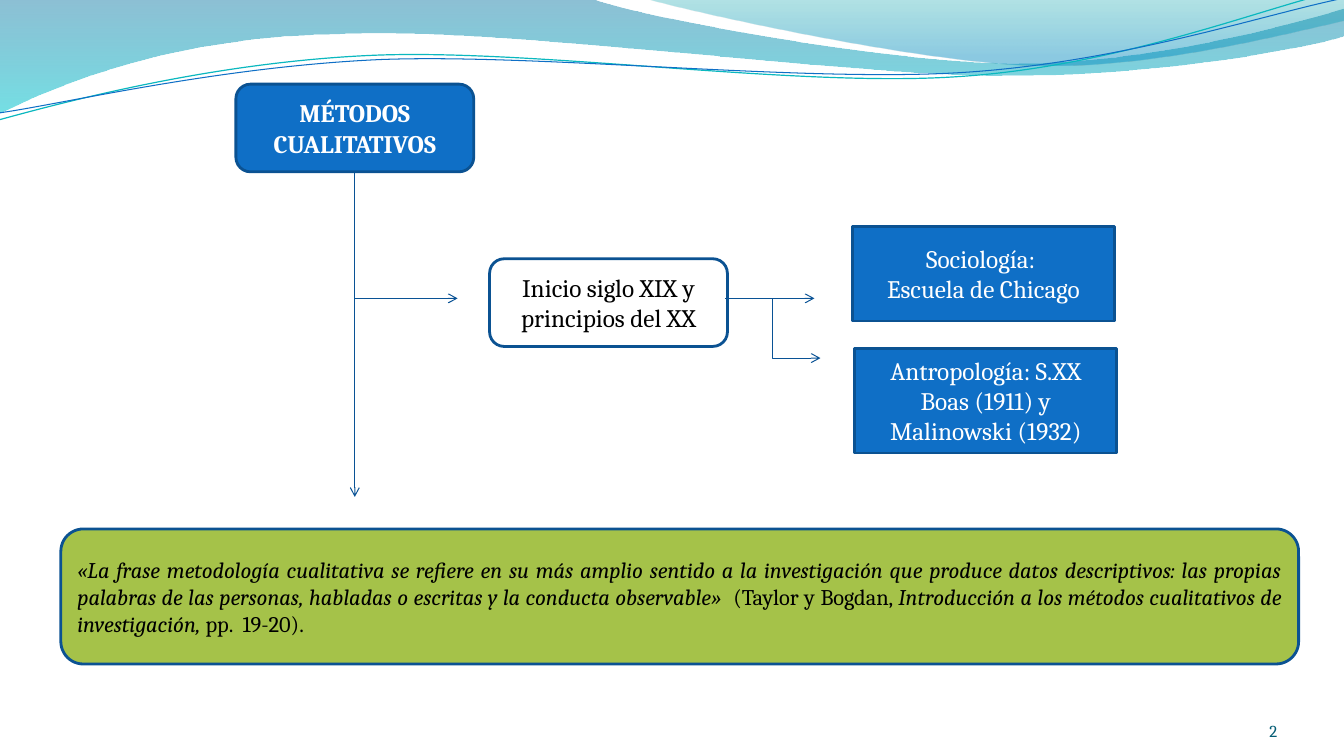
"""Build the slide on qualitative methods on a grid of 40 columns by 30 rows."""
import lxml.etree
import pptx
import pptx.dml.color
import pptx.enum.shapes
import pptx.enum.text
import pptx.oxml
import pptx.oxml.ns
import pptx.util

RGB = pptx.dml.color.RGBColor
KIND = pptx.enum.shapes.MSO_SHAPE
LINK = pptx.enum.shapes.MSO_CONNECTOR
ALIGN = pptx.enum.text.PP_ALIGN
ANCHOR = pptx.enum.text.MSO_ANCHOR

BLUE = RGB(0x0F, 0x6F, 0xC6)
NAVY = RGB(0x0B, 0x52, 0x92)
ARROW = RGB(0x09, 0x52, 0x95)
GREEN = RGB(0xA5, 0xC2, 0x49)
TEAL = RGB(0x0A, 0xB8, 0xBF)
SLATE = RGB(0x04, 0x5D, 0x75)
DEEP = RGB(0x00, 0x74, 0xA1)
CYAN = RGB(0x00, 0xC6, 0xCF)
SEA = RGB(0x00, 0xA1, 0xA9)
SKY = RGB(0x00, 0x8B, 0xBF)
WHITE = RGB(0xFF, 0xFF, 0xFF)
BLACK = RGB(0x00, 0x00, 0x00)

FONT = "Cambria"
WIDE = pptx.util.Inches(13.33)
HIGH = pptx.util.Inches(7.5)
TILT = -2.7

BAND = [
    [(0, 0)],
    [(17.61, -0.04)],
    [(19.02, 0.68), (26.55, 2.52), (30.33, 2.52)],
    [(34.14, 2.52), (38.34, 1.04), (40, 0.36)],
    [(40.05, 1.44)],
    [(39.33, 1.76), (34.8, 3.04), (29.82, 3)],
    [(24.87, 3), (15.27, 1.12), (10.29, 1.36)],
    [(5.16, 1.44), (1.83, 3.32), (-0.03, 4.52)],
    [(0, 0)],
]
CREST = [
    [(19.17, -0.04)],
    [(20.37, 0.44), (27.27, 2.48), (30.75, 2.6)],
    [(34.23, 2.76), (38.46, 1.28), (40, 0.84)],
    [(40, 0)],
    [(19.17, -0.04)],
]
UPPER = [
    [(-0.09, 3.5)],
    [(1.89, 2.91), (6.33, 1.62), (11.07, 1.64)],
    [(15.84, 1.66), (23.64, 3.72), (28.47, 3.58)],
    [(33.27, 3.48), (37.62, 1.43), (39.99, 0.86)],
]
LOWER = [
    [(-0.06, 3.22)],
    [(1.86, 2.98), (6.54, 1.8), (11.34, 1.82)],
    [(16.11, 1.88), (23.85, 3.52), (28.62, 3.42)],
    [(33.42, 3.32), (37.68, 1.67), (40.08, 1.18)],
]
QUOTE = [
    ("«La frase metodología cualitativa se refiere en su más amplio sentido a la "
     "investigación que produce datos descriptivos: las propias palabras de las "
     "personas, habladas o escritas y la conducta observable»  ", True),
    ("(Taylor y Bogdan, ", False),
    ("Introducción a los métodos cualitativos de investigación, ", True),
    ("pp.  19-20).", False),
]


def col(n):
    """Return the length of n columns."""
    return round(WIDE * n / 40)


def row(n):
    """Return the length of n rows."""
    return round(HIGH * n / 30)


def grid(spot):
    """Turn columns and rows into slide lengths."""
    x, y, w, h = spot
    return col(x), row(y), col(w), row(h)


def trace(slide, parts, close):
    """Draw an outline whose parts of three points are cubic curves."""
    qn = pptx.oxml.ns.qn
    dots = [(col(x), row(y)) for part in parts for x, y in part]
    pen = slide.shapes.build_freeform(*dots[0], scale=1.0)
    pen.add_line_segments(dots[1:], close=close)
    shape = pen.convert_to_shape()
    shape.shadow.inherit = False
    legs = iter(list(shape.element.spPr.iter(qn("a:lnTo"))))
    for part in parts[1:]:
        first, *rest = [next(legs) for _ in part]
        if rest:
            curve = lxml.etree.Element(qn("a:cubicBezTo"))
            first.addprevious(curve)
            for leg in (first, *rest):
                curve.append(leg[0])
                leg.getparent().remove(leg)
    return shape


def wave(slide, parts, stops):
    """Draw a filled wave that fades downward through the stops."""
    shape = trace(slide, parts, True)
    shape.line.fill.background()
    shape.fill.background()
    marks = "".join(
        f'<a:gs pos="{pos * 1000}"><a:srgbClr val="{tint}">'
        f'<a:alpha val="{alpha * 1000}"/></a:srgbClr></a:gs>'
        for pos, tint, alpha in stops
    )
    fade = pptx.oxml.parse_xml(
        f'<a:gradFill {pptx.oxml.ns.nsdecls("a")} rotWithShape="1">'
        f'<a:gsLst>{marks}</a:gsLst><a:lin ang="5400000" scaled="0"/></a:gradFill>'
    )
    props = shape.element.spPr
    props.replace(props.find(pptx.oxml.ns.qn("a:noFill")), fade)


def curl(slide, parts, tint, width):
    """Draw an open, tilted curved line."""
    shape = trace(slide, parts, False)
    shape.rotation = TILT
    shape.fill.background()
    shape.line.color.rgb = tint
    shape.line.width = pptx.util.Pt(width)


def style(frame, size, tint, align, bold=False):
    """Format all the text of a frame."""
    frame.word_wrap = True
    for para in frame.paragraphs:
        para.alignment = align
        for run in para.runs:
            run.font.name = FONT
            run.font.size = pptx.util.Pt(size)
            run.font.color.rgb = tint
            run.font.bold = bold


def box(slide, kind, spot, fill, text, tint, bold=False):
    """Draw a framed box with centred text."""
    shape = slide.shapes.add_shape(kind, *grid(spot))
    shape.shadow.inherit = False
    shape.fill.solid()
    shape.fill.fore_color.rgb = fill
    shape.line.color.rgb = NAVY
    shape.line.width = pptx.util.Pt(2)
    frame = shape.text_frame
    frame.vertical_anchor = ANCHOR.MIDDLE
    frame.text = text
    style(frame, 18, tint, ALIGN.CENTER, bold)
    return shape


def quote(slide, spot):
    """Draw the box with the quoted definition."""
    frame = box(slide, KIND.ROUNDED_RECTANGLE, spot, GREEN, "", BLACK).text_frame
    for text, slant in QUOTE:
        run = frame.paragraphs[0].add_run()
        run.text = text
        run.font.italic = slant
    style(frame, 16, BLACK, ALIGN.JUSTIFY)


def arrow(slide, kind, start, end):
    """Draw a connector with an open head at its end."""
    link = slide.shapes.add_connector(
        kind, col(start[0]), row(start[1]), col(end[0]), row(end[1])
    )
    link.line.color.rgb = ARROW
    link.line.width = pptx.util.Pt(0.75)
    qn = pptx.oxml.ns.qn
    props = link.element.spPr
    lxml.etree.SubElement(props.find(qn("a:ln")), qn("a:tailEnd"), type="arrow")
    lxml.etree.SubElement(props, qn("a:effectLst"))
    return link


def number(slide, spot, text):
    """Write the slide number."""
    frame = slide.shapes.add_textbox(*grid(spot)).text_frame
    frame.margin_left = frame.margin_right = 0
    frame.margin_top = frame.margin_bottom = 0
    frame.vertical_anchor = ANCHOR.BOTTOM
    frame.text = text
    style(frame, 12, SLATE, ALIGN.RIGHT)


def main():
    """Build and save the slide."""
    deck = pptx.Presentation()
    deck.slide_width, deck.slide_height = WIDE, HIGH
    slide = deck.slides.add_slide(deck.slide_layouts[6])
    wave(slide, BAND, [(0, DEEP, 45), (100, CYAN, 55)])
    wave(slide, CREST, [(0, SEA, 30), (80, SKY, 45)])
    curl(slide, UPPER, TEAL, 0.85)
    curl(slide, LOWER, BLUE, 0.75)
    number(slide, (34.68, 27.8, 3.33, 1.6), "2")
    rounded, plain = KIND.ROUNDED_RECTANGLE, KIND.RECTANGLE
    title = box(slide, rounded, (7.02, 3.34, 7.08, 3.48), BLUE,
                "MÉTODOS CUALITATIVOS", WHITE, True)
    trunk = arrow(slide, LINK.STRAIGHT, (10.56, 6.82), (10.56, 19.72))
    trunk.begin_connect(title, 2)
    arrow(slide, LINK.STRAIGHT, (10.56, 11.84), (13.62, 11.84))
    box(slide, rounded, (14.57, 10.27, 7.08, 3.48), WHITE,
        "Inicio siglo XIX y principios del XX", BLACK)
    arrow(slide, LINK.ELBOW, (21.59, 11.84), (24.42, 14.21))
    box(slide, plain, (25.44, 13.82, 7.8, 4.16), BLUE,
        "Antropología: S.XX\nBoas (1911) y Malinowski (1932)", WHITE)
    arrow(slide, LINK.STRAIGHT, (22.83, 11.84), (24.24, 11.84))
    box(slide, plain, (25.37, 8.98, 7.8, 3.76), BLUE,
        "Sociología: \nEscuela de Chicago", WHITE)
    quote(slide, (1.81, 20.99, 36.84, 5.36))
    deck.save("out.pptx")


if __name__ == "__main__":
    main()
